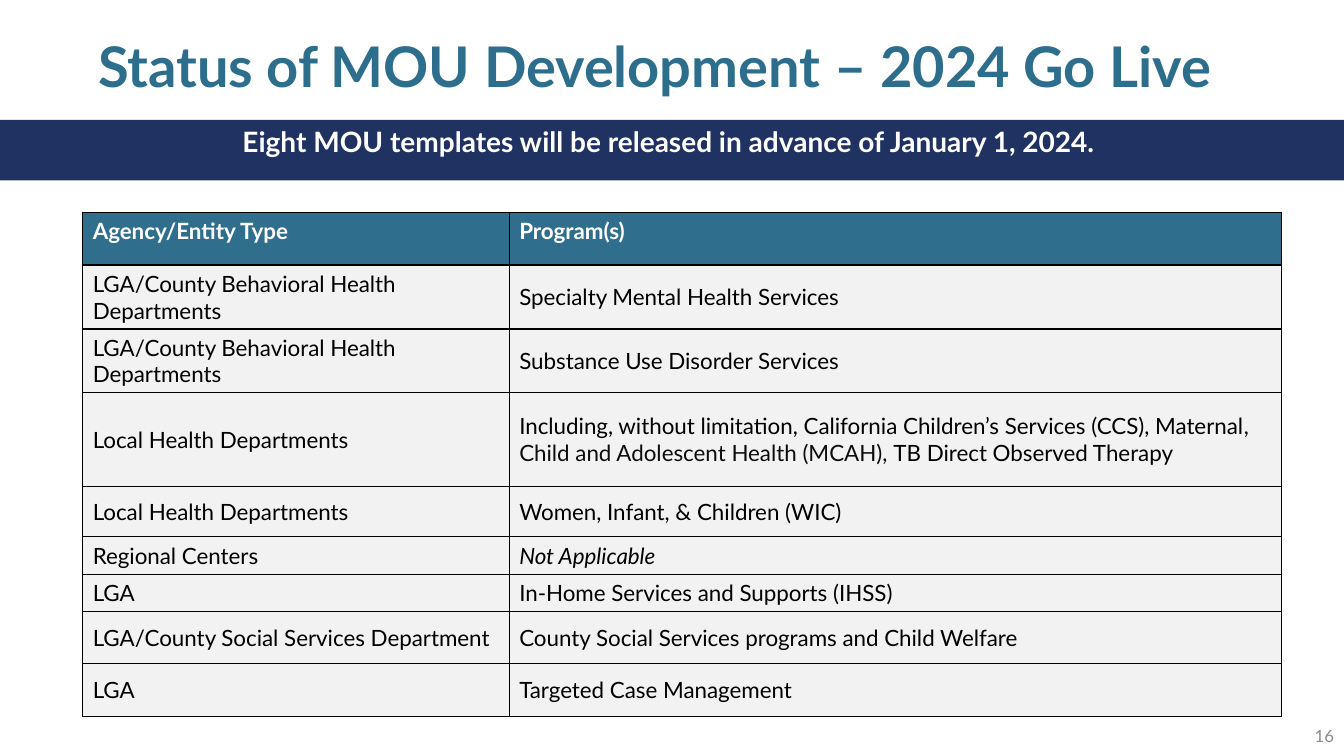
from dataclasses import dataclass
from typing import Any

from lxml.etree import SubElement
from pptx import Presentation
from pptx.dml.color import RGBColor
from pptx.enum.shapes import MSO_SHAPE
from pptx.enum.text import MSO_ANCHOR, MSO_AUTO_SIZE, PP_ALIGN
from pptx.oxml.ns import qn
from pptx.util import Emu, Pt

PX = 9144  # EMU per px, 100 px to the inch


@dataclass(frozen=True)
class Theme:
    font: str = "Lato"
    title: str = "2D6E8D"
    band: str = "203262"
    header: str = "306E8D"
    row: str = "F2F2F2"
    white: str = "FFFFFF"
    black: str = "000000"
    near_black: str = "0D0D0D"
    grey: str = "8C8C8C"
    title_size: int = 40
    band_size: int = 20
    table_size: int = 16
    number_size: int = 12
    border_width: int = 1


@dataclass(frozen=True)
class Span:
    text: str
    color: str
    italic: bool = False


@dataclass(frozen=True)
class Agreement:
    height: int
    agency: str
    programs: tuple[Span, ...]


THEME = Theme()


def program(text: str, italic: bool = False) -> tuple[Span, ...]:
    return (Span(text, THEME.black, italic),)


COLUMN_WIDTHS = (423, 766)
HEADER_HEIGHT = 52
HEADINGS = ("Agency/Entity Type", "Program(s)")
AGREEMENTS = (
    Agreement(63, "LGA/County Behavioral Health Departments",
              program("Specialty Mental Health Services")),
    Agreement(63, "LGA/County Behavioral Health Departments",
              program("Substance Use Disorder Services")),
    Agreement(93, "Local Health Departments", (
        Span("Including, without limitation, California Children’s Services (CCS), Maternal",
             THEME.black),
        Span(", Child and Adolescent Health (MCAH), ", THEME.near_black),
        Span("TB Direct Observed Therapy", THEME.black))),
    Agreement(50, "Local Health Departments", program("Women, Infant, & Children (WIC)")),
    Agreement(37, "Regional Centers", program("Not Applicable", italic=True)),
    Agreement(37, "LGA", program("In-Home Services and Supports (IHSS)")),
    Agreement(52, "LGA/County Social Services Department",
              program("County Social Services programs and Child Welfare")),
    Agreement(52, "LGA", program("Targeted Case Management")),
)


def box(*lengths: int) -> tuple[Emu, ...]:
    """Turn px lengths into EMU."""
    return tuple(Emu(length * PX) for length in lengths)


def set_attributes(target: Any, values: dict[str, Any]) -> None:
    for name, value in values.items():
        setattr(target, name, value)


def paint(shape: Any, color: str) -> None:
    shape.fill.solid()
    shape.fill.fore_color.rgb = RGBColor.from_string(color)


def write(frame: Any, spans: tuple[Span, ...], size: int, bold: bool = False,
          align: PP_ALIGN = PP_ALIGN.LEFT) -> None:
    paragraph = frame.paragraphs[0]
    paragraph.alignment = align
    for span in spans:
        run = paragraph.add_run()
        run.text = span.text
        set_attributes(run.font, {"name": THEME.font, "size": Pt(size),
                                  "bold": bold, "italic": span.italic})
        run.font.color.rgb = RGBColor.from_string(span.color)


def add_borders(cell: Any) -> None:
    properties = cell._tc.get_or_add_tcPr()
    for position, side in enumerate(("a:lnL", "a:lnR", "a:lnT", "a:lnB")):
        line = SubElement(properties, qn(side), w=str(Pt(THEME.border_width)))
        fill = SubElement(line, qn("a:solidFill"))
        SubElement(fill, qn("a:srgbClr"), val=THEME.black)
        properties.insert(position, line)


def fill_cell(cell: Any, spans: tuple[Span, ...], color: str, is_header: bool) -> None:
    paint(cell, color)
    add_borders(cell)
    cell.vertical_anchor = MSO_ANCHOR.TOP if is_header else MSO_ANCHOR.MIDDLE
    write(cell.text_frame, spans, THEME.table_size, bold=is_header)


def add_title(slide: Any) -> None:
    title = slide.shapes.title
    set_attributes(title, dict(zip(("left", "top", "width", "height"),
                                   box(12, 20, 1275, 97))))
    set_attributes(title.text_frame, {"vertical_anchor": MSO_ANCHOR.MIDDLE,
                                      "auto_size": MSO_AUTO_SIZE.NONE, "word_wrap": True})
    write(title.text_frame, (Span("Status of MOU Development – 2024 Go Live", THEME.title),),
          THEME.title_size, bold=True, align=PP_ALIGN.CENTER)
    title.text_frame.paragraphs[0].line_spacing = 0.9


def add_band(slide: Any) -> None:
    band = slide.shapes.add_shape(MSO_SHAPE.RECTANGLE, *box(0, 119, 1333, 60))
    band.shadow.inherit = False
    paint(band, THEME.band)
    band.line.fill.background()
    band.text_frame.vertical_anchor = MSO_ANCHOR.TOP
    message = "Eight MOU templates will be released in advance of January 1, 2024. "
    write(band.text_frame, (Span(message, THEME.white),), THEME.band_size,
          bold=True, align=PP_ALIGN.CENTER)


def add_page_number(slide: Any) -> None:
    number = slide.shapes.add_textbox(*box(1033, 710, 300, 40))
    set_attributes(number.text_frame, {"word_wrap": True,
                                       "vertical_anchor": MSO_ANCHOR.MIDDLE})
    write(number.text_frame, (Span("16", THEME.grey),), THEME.number_size,
          align=PP_ALIGN.RIGHT)


def add_agreements(slide: Any) -> None:
    heights = (HEADER_HEIGHT, *(agreement.height for agreement in AGREEMENTS))
    table = slide.shapes.add_table(len(heights), len(COLUMN_WIDTHS),
                                   *box(82, 211, sum(COLUMN_WIDTHS), sum(heights))).table
    table.horz_banding = False
    for column, width in zip(table.columns, box(*COLUMN_WIDTHS)):
        column.width = width
    for row, height in zip(table.rows, box(*heights)):
        row.height = height
    for column, heading in enumerate(HEADINGS):
        fill_cell(table.cell(0, column), (Span(heading, THEME.white),), THEME.header, True)
    for row, agreement in enumerate(AGREEMENTS, start=1):
        agency = (Span(agreement.agency, THEME.black),)
        for column, spans in enumerate((agency, agreement.programs)):
            fill_cell(table.cell(row, column), spans, THEME.row, False)


def main() -> None:
    presentation = Presentation()
    presentation.slide_width, presentation.slide_height = box(1333, 750)
    slide = presentation.slides.add_slide(presentation.slide_layouts[5])
    add_title(slide)
    add_page_number(slide)
    add_band(slide)
    add_agreements(slide)
    presentation.save("out.pptx")


if __name__ == "__main__":
    main()
